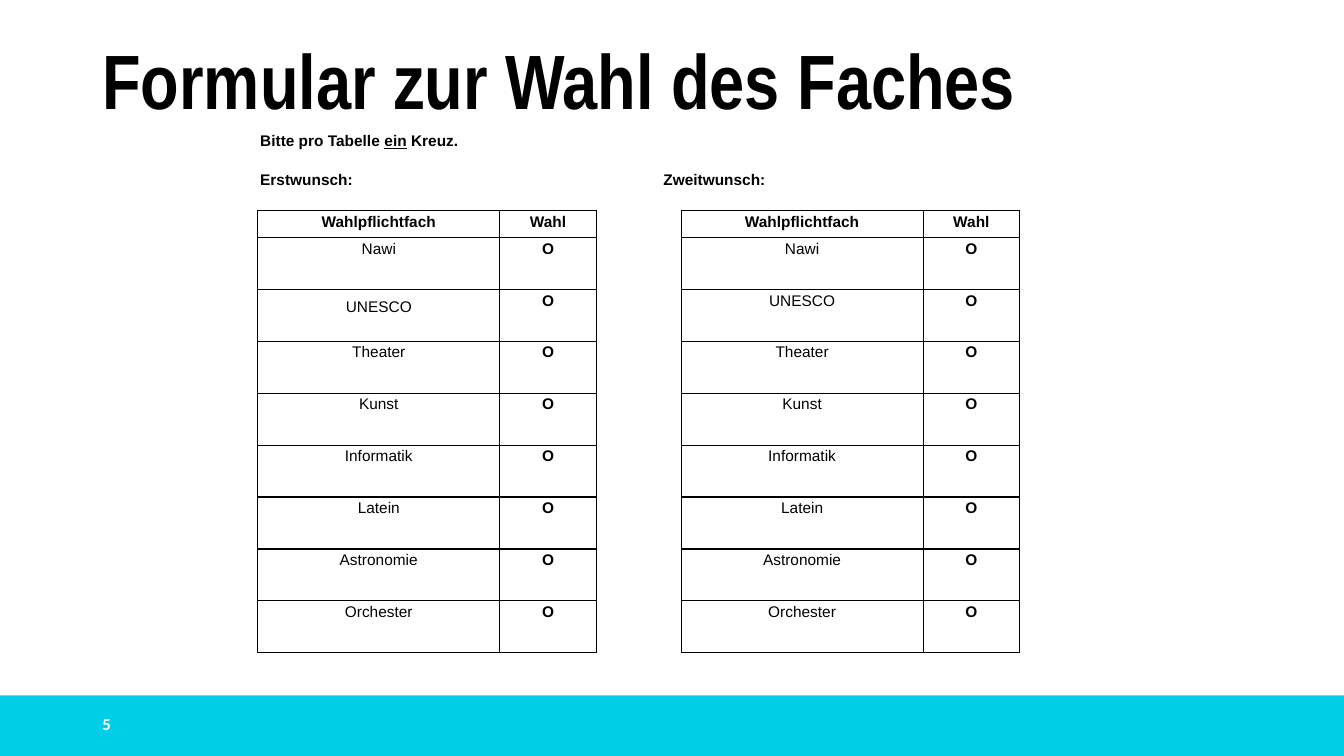
"""Build the slide with the form for choosing a subject."""
from dataclasses import dataclass

from lxml.etree import SubElement as Sub
from pptx import Presentation
from pptx.dml.color import RGBColor
from pptx.enum.shapes import MSO_SHAPE as Shape
from pptx.enum.text import MSO_ANCHOR as Anchor, MSO_AUTO_SIZE as Auto, PP_ALIGN as Align
from pptx.oxml.ns import qn
from pptx.util import Inches, Length, Pt

COLS, ROWS, UNIT = 160, 90, 1 / 12
BLACK, WHITE, CYAN = "000000", "FFFFFF", "00CEE7"
SUBJECTS = ["Nawi", "UNESCO", "Theater", "Kunst", "Informatik", "Latein", "Astronomie", "Orchester"]
HEAD = ("Wahlpflichtfach", "Wahl")
MARK = "Ο"


@dataclass(frozen=True)
class Box:
    """Place on the grid of columns and rows."""
    col: float
    row: float
    wide: float
    high: float

    def place(self) -> tuple[Length, ...]:
        """Return left, top, width and height."""
        return tuple(map(grid, (self.col, self.row, self.wide, self.high)))


@dataclass(frozen=True)
class Style:
    """Look of a paragraph."""
    size: float
    face: str = "Arial"
    color: str = BLACK
    bold: bool = True


@dataclass(frozen=True)
class Column:
    """Table column with its border sides."""
    wide: float
    sides: str = "LRTB"


TITLE = Box(11, 5, 138, 10.2)
BAR = Box(0, 82.8, COLS, 7.2)
NUMBER = Box(11, 83.8, 32.9, 4.8)
LABELS = Box(29.8, 12.8, 99.4, 17.2)
FORM = Box(30.7, 25.1, 93.5, 52.6)
SUBJECT, CHOICE = Column(28.8), Column(11.5)
COLUMNS = [SUBJECT, CHOICE, Column(10.1, "LR"), SUBJECT, CHOICE, Column(2.8, "L")]
HEAD_ROW = 3.2
PLAIN, STRONG = Style(11, bold=False), Style(11)


def grid(count: float) -> Length:
    """Turn grid steps into a length."""
    return Inches(count * UNIT)


def paint(text: str) -> RGBColor:
    """Turn a hex string into a colour."""
    return RGBColor.from_string(text)


def dress(para, style: Style) -> None:
    """Set the font of a paragraph."""
    font = para.font
    font.size, font.name, font.bold = Pt(style.size), style.face, style.bold
    font.color.rgb = paint(style.color)


def frame(shape, anchor: Anchor):
    """Prepare the text frame of a shape."""
    text = shape.text_frame
    text.word_wrap, text.auto_size = True, Auto.NONE
    text.vertical_anchor = anchor
    return text


def draw_title(slide) -> None:
    """Place and format the title."""
    title = slide.shapes.title
    title.left, title.top, title.width, title.height = TITLE.place()
    para = frame(title, Anchor.MIDDLE).paragraphs[0]
    para.text = "Formular zur Wahl des Faches"
    para.alignment, para.line_spacing = Align.LEFT, 0.9
    dress(para, Style(55, "Arial Narrow"))


def draw_bar(slide) -> None:
    """Draw the bar at the foot and the page number."""
    bar = slide.shapes.add_shape(Shape.RECTANGLE, *BAR.place())
    bar.shadow.inherit = False
    bar.fill.solid()
    bar.fill.fore_color.rgb = paint(CYAN)
    bar.line.fill.background()
    para = frame(slide.shapes.add_textbox(*NUMBER.place()), Anchor.MIDDLE).paragraphs[0]
    para.text = "5"
    dress(para, Style(12, "Calibri", WHITE))


def draw_labels(slide) -> None:
    """Write the hint and the two table labels."""
    text = frame(slide.shapes.add_textbox(*LABELS.place()), Anchor.TOP)
    text.margin_top = grid(2.8)
    hint, names = text.paragraphs[0], text.add_paragraph()
    for part in ("Bitte pro Tabelle ", "ein", " Kreuz."):
        run = hint.add_run()
        run.text = part
        if part == "ein":
            run.font.underline = True
    names.text = "Erstwunsch:\tZweitwunsch:"
    names.space_before = Pt(15)
    tabs = Sub(names._p.get_or_add_pPr(), qn("a:tabLst"))
    Sub(tabs, qn("a:tab"), pos=str(grid(48)), algn="l")
    for para in (hint, names):
        dress(para, STRONG)


def edge(cell, sides: str) -> None:
    """Draw the borders on the given sides of a cell."""
    props = cell._tc.get_or_add_tcPr()
    for side in "LRTB":
        line = Sub(props, qn(f"a:ln{side}"), w=str(Pt(1)))
        if side in sides:
            Sub(Sub(line, qn("a:solidFill")), qn("a:srgbClr"), val=BLACK)
        else:
            Sub(line, qn("a:noFill"))
    cell.fill.background()


def write(cell, text: str, style: Style) -> None:
    """Fill a cell with centred text."""
    cell.margin_left = cell.margin_right = Inches(0.07)
    cell.margin_top = cell.margin_bottom = 0
    para = cell.text_frame.paragraphs[0]
    para.alignment, para.line_spacing = Align.CENTER, 1.15
    dress(para, style)
    if text:
        para.text = text
    else:
        Sub(para._p, qn("a:endParaRPr"), sz=str(style.size * 100))


def draw_form(slide) -> None:
    """Draw the table with both choices."""
    lines = [HEAD] + [(name, MARK) for name in SUBJECTS]
    table = slide.shapes.add_table(len(lines), len(COLUMNS), *FORM.place()).table
    table.first_row = table.horz_banding = False
    for col, column in zip(table.columns, COLUMNS):
        col.width = grid(column.wide)
    step = (FORM.high - HEAD_ROW) / len(SUBJECTS)
    for row, (name, mark) in enumerate(lines):
        table.rows[row].height = grid(step if row else HEAD_ROW)
        texts = (name, mark, "") * 2
        for col, (text, column) in enumerate(zip(texts, COLUMNS)):
            cell = table.cell(row, col)
            write(cell, text, PLAIN if row and column is SUBJECT else STRONG)
            edge(cell, column.sides)
    table.cell(SUBJECTS.index("UNESCO") + 1, 0).margin_top = Inches(0.06)


def main() -> None:
    """Build and save the slide."""
    deck = Presentation()
    deck.slide_width, deck.slide_height = grid(COLS), grid(ROWS)
    slide = deck.slides.add_slide(deck.slide_layouts[5])
    for draw in (draw_bar, draw_title, draw_form, draw_labels):
        draw(slide)
    deck.save("out.pptx")


if __name__ == "__main__":
    main()
